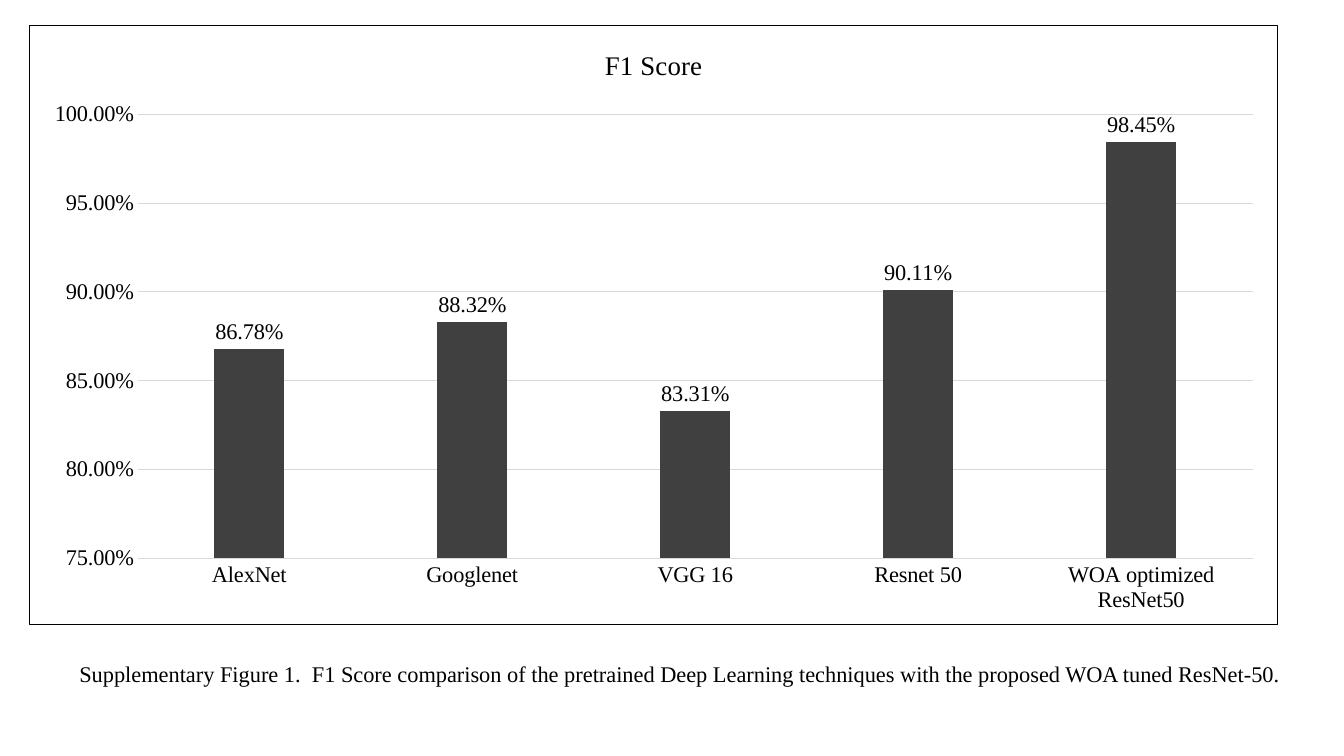
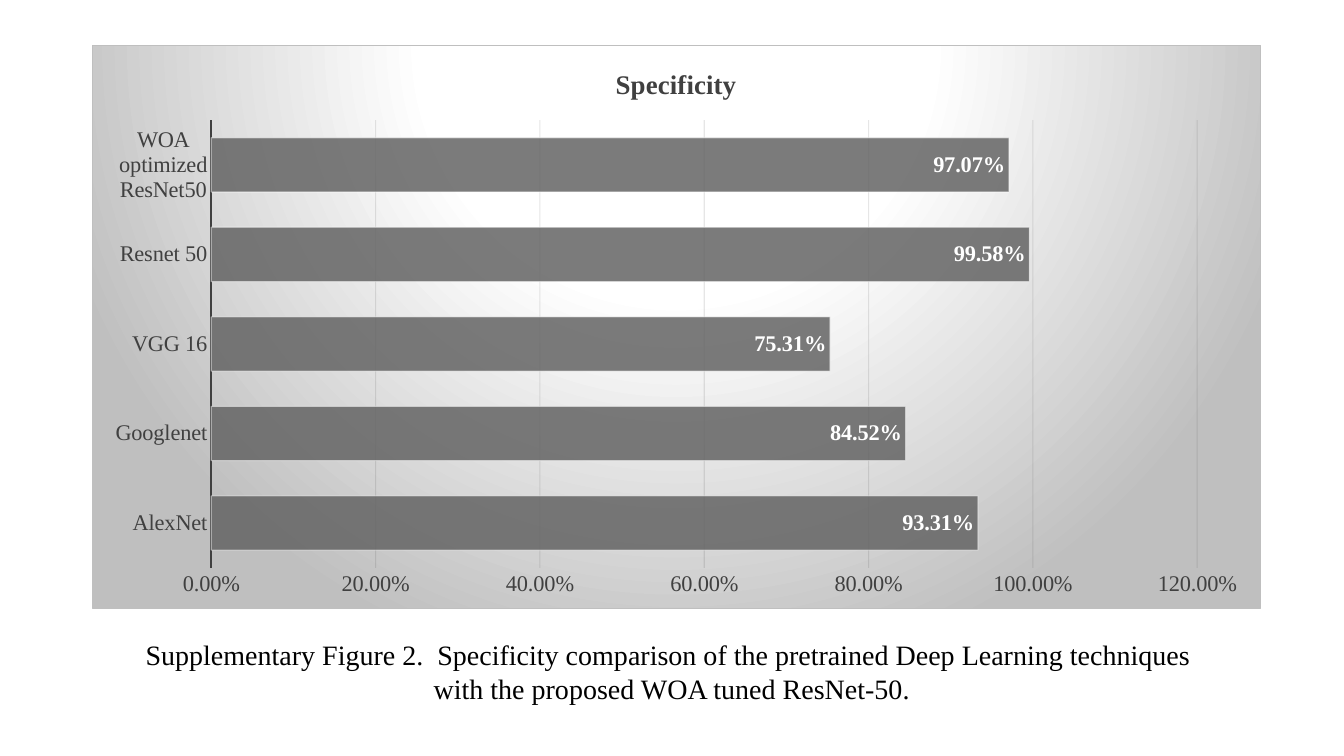
"""Build two slides comparing F1 score and specificity of pretrained networks."""
from lxml import etree
from pptx import Presentation
from pptx import util as u
from pptx.chart.data import CategoryChartData
from pptx.dml.color import RGBColor
from pptx.enum import chart as ch, text
from pptx.oxml import ns, parse_xml

FONT = "Times New Roman"
PERCENT = "0.00%"
COLORS = {
    "black": "000000", "white": "FFFFFF", "dark": "404040", "bar": "646464",
    "ink": "0D0D0D", "rule": "D9D9D9", "silver": "BFBFBF",
}
NETWORKS = ["AlexNet", "Googlenet", "VGG 16", "Resnet 50", "WOA optimized ResNet50"]
SOLID = '<a:solidFill><a:srgbClr val="{}"/></a:solidFill>'


def rgb(name):
    return RGBColor.from_string(COLORS[name])


def style_font(font, size=16, color="black", bold=False):
    font.name = FONT
    font.size = u.Pt(size)
    font.bold = bold
    font.color.rgb = rgb(color)


def write(p, words, **fmt):
    p.alignment = text.PP_ALIGN.CENTER
    r = p.add_run()
    r.text = words
    style_font(r.font, **fmt)


def style_line(line, color, width=0.75):
    line.width = u.Pt(width)
    line.color.rgb = rgb(color)


def set_alpha(chart, xpath, percent):
    for color in chart.element.xpath(xpath + "//a:srgbClr"):
        etree.SubElement(color, ns.qn("a:alpha"), val=str(percent * 1000))


def radial_fill(stops, left, top, right, bottom):
    marks = "".join(
        f'<a:gs pos="{pos * 1000}"><a:srgbClr val="{COLORS[c]}"/></a:gs>' for pos, c in stops)
    return (
        f'<a:gradFill rotWithShape="1"><a:gsLst>{marks}</a:gsLst><a:path path="circle">'
        f'<a:fillToRect l="{left * 1000}" t="{top * 1000}" r="{right * 1000}" b="{bottom * 1000}"/>'
        '</a:path></a:gradFill>')


class Deck:
    def __init__(self):
        self.prs = Presentation()
        self.prs.slide_width = u.Cm(33.87)
        self.prs.slide_height = u.Cm(19.05)
        self.s = None

    def add_slide(self):
        self.s = self.prs.slides.add_slide(self.prs.slide_layouts[5])

    def caption(self, box, lines, size):
        sp = self.s.shapes.title
        sp.left, sp.top, sp.width, sp.height = map(u.Cm, box)
        tf = sp.text_frame
        tf.word_wrap = False
        tf.auto_size = text.MSO_AUTO_SIZE.SHAPE_TO_FIT_TEXT
        tf.vertical_anchor = text.MSO_ANCHOR.MIDDLE
        for i, line in enumerate(lines):
            p = tf.add_paragraph() if i else tf.paragraphs[0]
            write(p, line, size=size)

    def chart(self, box, kind, name, values, gap, overlap, color, bar, bold=False):
        data = CategoryChartData(number_format=PERCENT)
        data.categories = NETWORKS
        data.add_series(name, values)
        chart = self.s.shapes.add_chart(kind, *map(u.Cm, box), data).chart
        style_font(chart.font)
        chart.has_legend = False
        chart.has_title = True
        write(chart.chart_title.text_frame.paragraphs[0], name, size=19.2, color=color, bold=bold)
        chart.chart_title.include_in_layout = False
        plot = chart.plots[0]
        plot.gap_width, plot.overlap = gap, overlap
        plot.vary_by_categories = False
        series = plot.series[0]
        series.invert_if_negative = False
        series.format.fill.solid()
        series.format.fill.fore_color.rgb = rgb(bar)
        return chart

    def axes(self, chart, low, high, step, color, base, base_width, grid):
        for axis in (chart.category_axis, chart.value_axis):
            axis.major_tick_mark = axis.minor_tick_mark = ch.XL_TICK_MARK.NONE
            style_font(axis.tick_labels.font, color=color)
        chart.category_axis.has_major_gridlines = False
        style_line(chart.category_axis.format.line, base, base_width)
        axis = chart.value_axis
        axis.minimum_scale, axis.maximum_scale, axis.major_unit = low, high, step
        axis.format.line.fill.background()
        axis.tick_labels.number_format = PERCENT
        axis.tick_labels.number_format_is_linked = False
        axis.has_major_gridlines = True
        style_line(axis.major_gridlines.format.line, grid)

    def labels(self, chart, position, **fmt):
        labels = chart.plots[0].series[0].data_labels
        labels.show_value = True
        labels.position = position
        labels.number_format = PERCENT
        labels.number_format_is_linked = False
        style_font(labels.font, **fmt)

    def frame(self, chart, fill, border):
        frame = parse_xml(
            f'<c:spPr {ns.nsdecls("c", "a")}>{fill}'
            f'<a:ln w="{u.Pt(0.75)}">{SOLID.format(COLORS[border])}</a:ln></c:spPr>')
        chart.element.find(ns.qn("c:chart")).addnext(frame)


def f1_slide(deck):
    deck.add_slide()
    chart = deck.chart(
        (0.74, 0.64, 31.47, 15.11), ch.XL_CHART_TYPE.COLUMN_CLUSTERED, "F1 Score",
        (0.8678, 0.8832, 0.8331, 0.9011, 0.9845), gap=219, overlap=-27,
        color="black", bar="dark")
    deck.axes(chart, 0.75, 1, 0.05, color="black", base="rule", base_width=0.75, grid="rule")
    deck.labels(chart, ch.XL_LABEL_POSITION.OUTSIDE_END)
    deck.frame(chart, SOLID.format(COLORS["white"]), "black")
    deck.caption((1.6, 16.51, 31.06, 0.94), [
        "Supplementary Figure 1.  F1 Score comparison of the pretrained Deep Learning "
        "techniques with the proposed WOA tuned ResNet-50."], 16)


def specificity_slide(deck):
    deck.add_slide()
    chart = deck.chart(
        (2.31, 1.14, 29.46, 14.2), ch.XL_CHART_TYPE.BAR_CLUSTERED, "Specificity",
        (0.9331, 0.8452, 0.7531, 0.9958, 0.9707), gap=65, overlap=0,
        color="dark", bar="bar", bold=True)
    deck.axes(chart, 0, 1.2, 0.2, color="dark", base="dark", base_width=1.5, grid="ink")
    style_line(chart.plots[0].series[0].format.line, "white")
    set_alpha(chart, ".//c:ser/c:spPr/a:solidFill", 85)
    set_alpha(chart, ".//c:ser/c:spPr/a:ln", 50)
    set_alpha(chart, ".//c:majorGridlines", 10)
    deck.labels(chart, ch.XL_LABEL_POSITION.INSIDE_END, color="white", bold=True)
    stops = [(0, "white"), (39, "white"), (100, "silver")]
    deck.frame(chart, radial_fill(stops, 50, -80, 50, 180), "silver")
    deck.caption((3.33, 15.93, 27.2, 1.96), [
        "Supplementary Figure 2.  Specificity comparison of the pretrained Deep Learning techniques ",
        "with the proposed WOA tuned ResNet-50."], 20)


def main():
    deck = Deck()
    f1_slide(deck)
    specificity_slide(deck)
    deck.prs.save("out.pptx")


if __name__ == "__main__":
    main()
